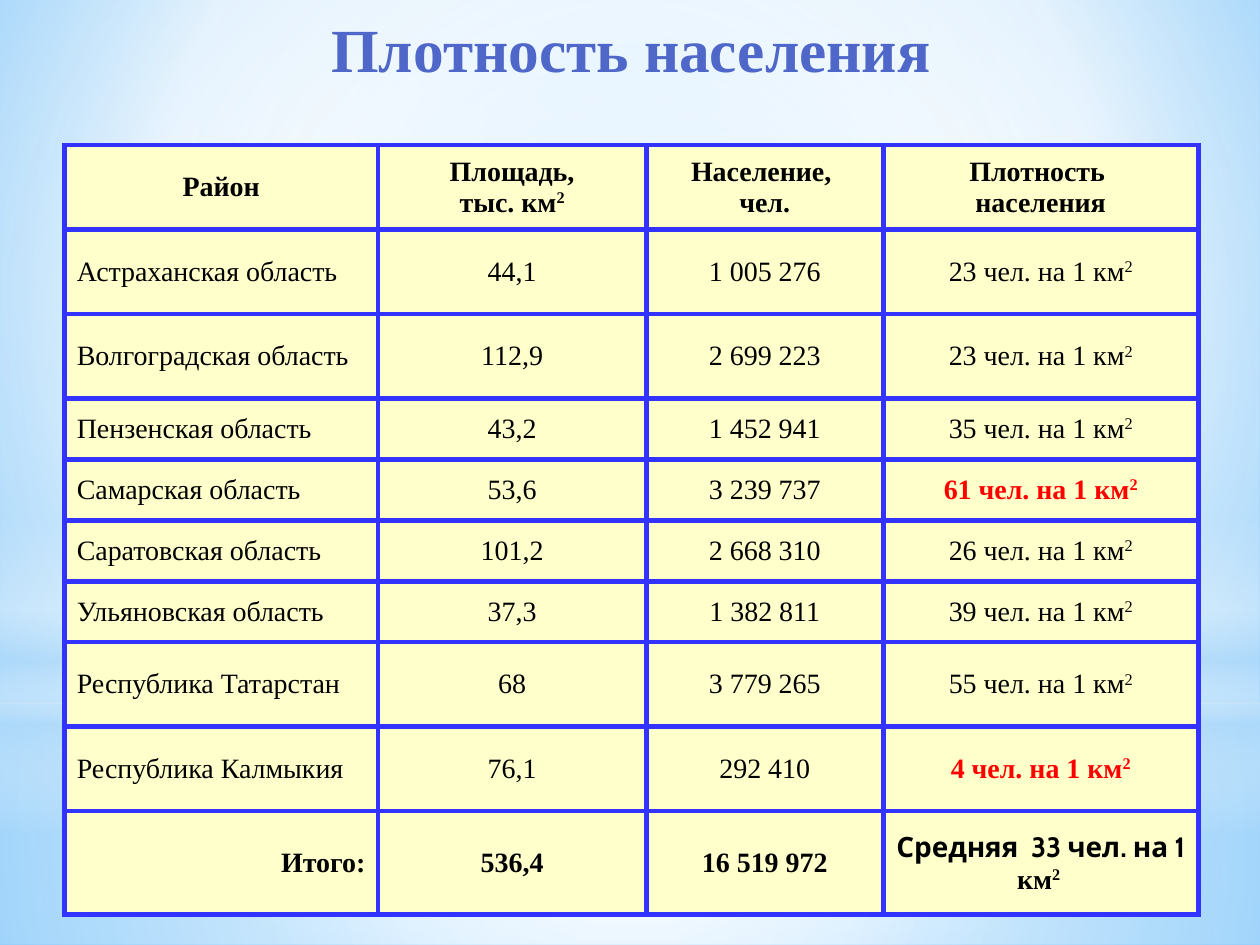
"""Build a slide with a table of population density by region."""
from dataclasses import dataclass
from typing import Optional

from lxml import etree
from pptx import Presentation
from pptx import util as u
from pptx.dml.color import RGBColor
from pptx.enum import shapes, text
from pptx.oxml.ns import qn

WIDTH, HEIGHT = u.Inches(10), u.Inches(7.5)
SERIF, SANS = "Times New Roman", "Cabin"
BLACK = RGBColor(0x00, 0x00, 0x00)
RED = RGBColor(0xFF, 0x00, 0x00)
INDIGO = RGBColor(0x4E, 0x67, 0xC8)
BORDER = RGBColor(0x33, 0x33, 0xFF)
CREAM = RGBColor(0xFF, 0xFF, 0xCC)
WHITE = RGBColor(0xFF, 0xFF, 0xFF)
PALE = RGBColor(0xB4, 0xDC, 0xFA)
SKY = RGBColor(0x9E, 0xD5, 0xFF)
AZURE = RGBColor(0x5B, 0xB9, 0xFF)
CENTER = (50, 50, 50, 50)
HANGING = u.Inches(0.38)
COLUMN_SHARES = (24.9, 21.3, 18.8, 25)
TALL, SHORT, LAST = 8.95, 6.45, 10.93
ROW_SHARES = (TALL,) * 3 + (SHORT,) * 4 + (TALL,) * 2 + (LAST,)
ALIGN = text.PP_ALIGN


@dataclass
class Gradient:
    """Stops of position, colour and opacity; linear when focus is None."""
    stops: tuple
    focus: Optional[tuple] = CENTER


@dataclass
class Backdrop:
    """A tinted full-width shape, placed in percent of the slide height."""
    kind: shapes.MSO_SHAPE
    top: float
    height: float
    gradient: Gradient


@dataclass
class Region:
    """One table row of area, population and density."""
    name: str
    area: str
    population: str
    density: str
    extreme: bool = False


PAGE = Gradient(((0, SKY, 100), (60, WHITE, 100), (100, AZURE, 100)), (20, 10, 20, 60))
RECTANGLE, OVAL = shapes.MSO_SHAPE.RECTANGLE, shapes.MSO_SHAPE.OVAL
BACKDROPS = (
    Backdrop(RECTANGLE, 74.4, 25.6, Gradient(((0, WHITE, 91), (37, WHITE, 76), (100, PALE, 79)))),
    Backdrop(RECTANGLE, 0, 74.4, Gradient(((0, WHITE, 89), (48, WHITE, 62), (100, PALE, 79)))),
    Backdrop(RECTANGLE, 54.93, 33.33, Gradient((
        (0, WHITE, 0), (29, WHITE, 30), (45, PALE, 40),
        (55, WHITE, 26), (65, PALE, 60), (100, WHITE, 0)), None)),
    Backdrop(OVAL, 23.33, 74.4, Gradient(((0, WHITE, 100), (56, WHITE, 0)))),
)
HEADERS = ("Район", "Площадь,\nтыс. км^2", "Население, \nчел.", "Плотность \nнаселения")
REGIONS = (
    Region("Астраханская область", "44,1", "1 005 276", "23"),
    Region("Волгоградская область", "112,9", "2 699 223", "23"),
    Region("Пензенская область", "43,2", "1 452 941", "35"),
    Region("Самарская область", "53,6", "3 239 737", "61", True),
    Region("Саратовская область", "101,2", "2 668 310", "26"),
    Region("Ульяновская область", "37,3", "1 382 811", "39"),
    Region("Республика Татарстан", "68", "3 779 265", "55"),
    Region("Республика Калмыкия", "76,1", "292 410", "4", True),
)
TOTALS = ("Итого:", "536,4", "16 519 972")


def across(percent: float) -> int:
    """Return a share of the slide width."""
    return round(WIDTH * percent / 100)


def down(percent: float) -> int:
    """Return a share of the slide height."""
    return round(HEIGHT * percent / 100)


def add_color(parent, color: RGBColor, opacity: int = 100) -> None:
    """Append a colour with its opacity to an XML element."""
    node = etree.SubElement(parent, qn("a:srgbClr"), val=str(color))
    if opacity < 100:
        etree.SubElement(node, qn("a:alpha"), val=str(opacity * 1000))


def paint(fill, element, gradient: Gradient) -> None:
    """Fill a shape or background with a gradient."""
    fill.gradient()
    node = element.find(".//" + qn("a:gradFill"))
    node.clear()
    node.set("rotWithShape", "1")
    stops = etree.SubElement(node, qn("a:gsLst"))
    for position, color, opacity in gradient.stops:
        stop = etree.SubElement(stops, qn("a:gs"), pos=str(position * 1000))
        add_color(stop, color, opacity)
    if gradient.focus is None:
        etree.SubElement(node, qn("a:lin"), ang="5400000", scaled="0")
    else:
        path = etree.SubElement(node, qn("a:path"), path="circle")
        sides = {side: str(value * 1000) for side, value in zip("ltrb", gradient.focus)}
        etree.SubElement(path, qn("a:fillToRect"), **sides)


def add_backdrop(slide, backdrop: Backdrop) -> None:
    """Draw one tinted backdrop shape."""
    shape = slide.shapes.add_shape(
        backdrop.kind, 0, down(backdrop.top), WIDTH, down(backdrop.height))
    shape.shadow.inherit = False
    shape.line.fill.background()
    paint(shape.fill, shape.element, backdrop.gradient)


def write(paragraph, content: str, *, size: float = 16, font: str = SERIF,
          color: RGBColor = BLACK, bold: bool = False, align=ALIGN.CENTER) -> None:
    """Append formatted text, raising whatever follows a caret."""
    paragraph.alignment = align
    for index, part in enumerate(content.split("^")):
        run = paragraph.add_run()
        run.text = part
        run.font.size, run.font.name = u.Pt(size), font
        run.font.bold, run.font.color.rgb = bold, color
        if index:
            run.font._element.set("baseline", "30000")


def style_cell(cell) -> None:
    """Give a cell its fill, anchor and borders."""
    cell.fill.solid()
    cell.fill.fore_color.rgb = CREAM
    cell.vertical_anchor = text.MSO_ANCHOR.MIDDLE
    properties = cell._tc.get_or_add_tcPr()
    for index, side in enumerate("LRTB"):
        line = etree.Element(qn(f"a:ln{side}"), w=str(u.Pt(3)))
        add_color(etree.SubElement(line, qn("a:solidFill")), BORDER)
        properties.insert(index, line)


def write_cell(cell, content: str, **style) -> None:
    """Write the lines of a cell as hanging paragraphs."""
    for index, line in enumerate(content.split("\n")):
        frame = cell.text_frame
        paragraph = frame.add_paragraph() if index else frame.paragraphs[0]
        write(paragraph, line, **style)
        properties = paragraph._p.get_or_add_pPr()
        properties.set("marL", str(HANGING))
        properties.set("indent", str(-HANGING))


def add_density_table(slide) -> None:
    """Draw the table of regions with its header and totals."""
    table = slide.shapes.add_table(
        len(ROW_SHARES), len(COLUMN_SHARES),
        across(5.1), down(15.33), across(90), down(sum(ROW_SHARES))).table
    for column, share in zip(table.columns, COLUMN_SHARES):
        column.width = across(share)
    for row, share in zip(table.rows, ROW_SHARES):
        row.height = down(share)
    for cell in table.iter_cells():
        style_cell(cell)
    for column, header in enumerate(HEADERS):
        write_cell(table.cell(0, column), header, bold=True)
    for row, region in enumerate(REGIONS, 1):
        write_cell(table.cell(row, 0), region.name, align=ALIGN.JUSTIFY)
        write_cell(table.cell(row, 1), region.area)
        write_cell(table.cell(row, 2), region.population)
        write_cell(table.cell(row, 3), f"{region.density} чел. на 1 км^2",
                   color=RED if region.extreme else BLACK, bold=region.extreme)
    last = len(ROW_SHARES) - 1
    for column, total in enumerate(TOTALS):
        write_cell(table.cell(last, column), total, bold=True,
                   align=ALIGN.CENTER if column else ALIGN.RIGHT)
    average = table.cell(last, 3).text_frame.paragraphs[0]
    average.space_before = u.Pt(3.2)
    write(average, "Средняя  33 чел. на 1 ", font=SANS, bold=True)
    write(average, "км^2 ", bold=True)


def main() -> None:
    """Build and save the presentation."""
    presentation = Presentation()
    presentation.slide_width, presentation.slide_height = WIDTH, HEIGHT
    slide = presentation.slides.add_slide(presentation.slide_layouts[5])
    paint(slide.background.fill, slide.element, PAGE)
    for backdrop in BACKDROPS:
        add_backdrop(slide, backdrop)
    title = slide.shapes.title
    title.element.getparent().append(title.element)
    title.left, title.top, title.width, title.height = across(5.1), 0, across(90), down(10.13)
    title.text_frame.auto_size = text.MSO_AUTO_SIZE.NONE
    title.text_frame.vertical_anchor = text.MSO_ANCHOR.MIDDLE
    write(title.text_frame.paragraphs[0], "Плотность населения", size=35, color=INDIGO, bold=True)
    add_density_table(slide)
    presentation.save("out.pptx")


if __name__ == "__main__":
    main()
